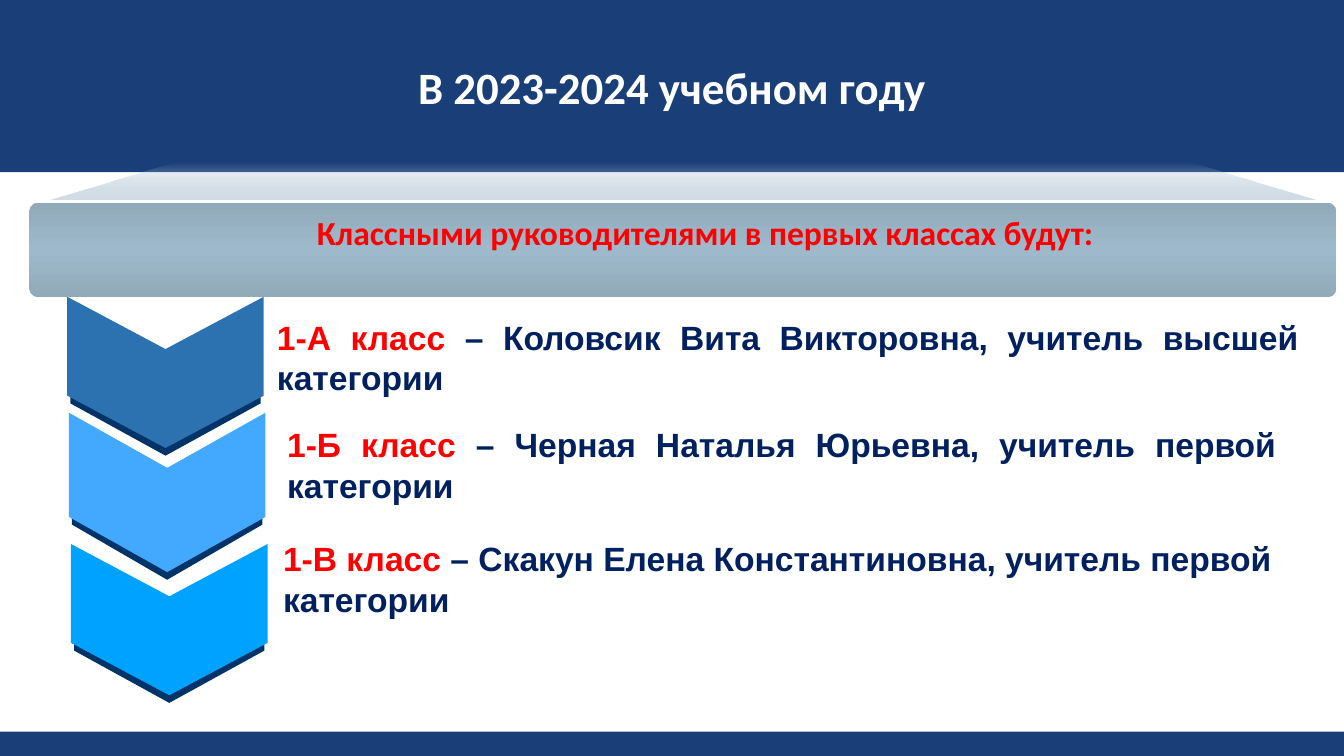
"""Build a slide that names the class teachers of the first forms."""
from dataclasses import dataclass

import lxml.etree
import pptx
import pptx.dml.color
import pptx.enum.shapes
import pptx.enum.text
import pptx.oxml.ns
import pptx.shapes.autoshape
import pptx.slide
import pptx.util

Pt = pptx.util.Pt
RGBColor = pptx.dml.color.RGBColor
Shapes = pptx.enum.shapes.MSO_SHAPE
Align = pptx.enum.text.PP_ALIGN
qn = pptx.oxml.ns.qn

NAVY = RGBColor(0x1A, 0x3E, 0x78)
WHITE = RGBColor(0xFF, 0xFF, 0xFF)
RED = RGBColor(0xFF, 0x00, 0x00)
INK = RGBColor(0x00, 0x20, 0x60)
EDGE = RGBColor(0x00, 0x34, 0x68)
STEEL = RGBColor(0x2C, 0x72, 0xB1)
SKY = RGBColor(0x43, 0xA9, 0xFF)
AZURE = RGBColor(0x00, 0xA2, 0xFF)
MIST = RGBColor(0xD1, 0xDC, 0xE5)
HAZE = RGBColor(0x9D, 0xB9, 0xCB)
SLATE = RGBColor(0x90, 0xAA, 0xBA)

CHEVRON_BREADTH = 140.4
EDGE_BREADTH = 136
EDGE_DROP = 5.5
TEXT_HEIGHT = 65.5


@dataclass
class Span:
    """A run of bold text."""
    text: str
    color: RGBColor
    size: float = 24
    font: str = "Arial"


@dataclass
class Stop:
    """A gradient stop, with position and opacity in percent."""
    position: int
    color: RGBColor
    opacity: int = 100


@dataclass
class FormRow:
    """A chevron and the text of one form beside it."""
    center: float
    top: float
    length: float
    color: RGBColor
    text_left: float
    text_top: float
    text_width: float
    align: Align
    space_after: float
    form: str
    teacher: str


ROWS = [
    FormRow(118.2, 212, 108, STEEL, 190.8, 222.5, 743.8, Align.JUSTIFY, 0,
            "1-А класс ", "– Коловсик Вита Викторовна, учитель высшей категории"),
    FormRow(119.4, 294.8, 113.8, SKY, 198, 299.5, 720.7, Align.JUSTIFY, 8,
            "1-Б класс ", "– Черная Наталья Юрьевна, учитель первой категории"),
    FormRow(120.9, 388.6, 108, AZURE, 195.1, 380.9, 743.8, Align.LEFT, 8,
            "1-В класс ", "– Скакун Елена Константиновна, учитель первой категории"),
]


def set_plain(shape: pptx.shapes.autoshape.Shape) -> None:
    """Remove the line and the shadow of a shape."""
    shape.shadow.inherit = False
    shape.line.fill.background()


def add_solid(page: pptx.slide.Slide, kind: Shapes, left: float, top: float,
              width: float, height: float, color: RGBColor) -> pptx.shapes.autoshape.Shape:
    """Add a preset shape in one colour."""
    shape = page.shapes.add_shape(kind, Pt(left), Pt(top), Pt(width), Pt(height))
    set_plain(shape)
    shape.fill.solid()
    shape.fill.fore_color.rgb = color
    return shape


def set_gradient(shape: pptx.shapes.autoshape.Shape, stops: list[Stop]) -> None:
    """Fill a shape with a gradient that runs from bottom to top."""
    shape.fill.gradient()
    shape.fill.gradient_angle = 90
    stop_list = next(shape.fill.gradient_stops._gsLst.iter(qn("a:gsLst")))
    for old in list(stop_list):
        stop_list.remove(old)
    for stop in stops:
        mark = lxml.etree.SubElement(stop_list, qn("a:gs"), pos=str(stop.position * 1000))
        color = lxml.etree.SubElement(mark, qn("a:srgbClr"), val=str(stop.color))
        lxml.etree.SubElement(color, qn("a:alpha"), val=str(stop.opacity * 1000))


def write(shape: pptx.shapes.autoshape.Shape, spans: list[Span], align: Align,
          space_after: float = 0) -> None:
    """Write one paragraph of bold spans into a shape."""
    shape.text_frame.word_wrap = True
    para = shape.text_frame.paragraphs[0]
    for name, value in {"alignment": align, "space_after": Pt(space_after)}.items():
        setattr(para, name, value)
    for span in spans:
        run = para.add_run()
        run.text = span.text
        run.font.color.rgb = span.color
        for name, value in {"name": span.font, "size": Pt(span.size), "bold": True}.items():
            setattr(run.font, name, value)


def add_text(page: pptx.slide.Slide, left: float, top: float, width: float, height: float,
             spans: list[Span], align: Align, space_after: float = 0) -> None:
    """Add a text box with one paragraph."""
    box = page.shapes.add_textbox(Pt(left), Pt(top), Pt(width), Pt(height))
    write(box, spans, align, space_after)


def add_chevron(page: pptx.slide.Slide, center: float, top: float, length: float,
                breadth: float, color: RGBColor) -> None:
    """Add a chevron that points down."""
    chevron = add_solid(page, Shapes.CHEVRON, center - length / 2,
                        top + (length - breadth) / 2, length, breadth, color)
    chevron.rotation = 90
    chevron.adjustments[0] = 0.346


def add_row(page: pptx.slide.Slide, row: FormRow) -> None:
    """Add the chevron with its dark edge, and the text of a form."""
    add_chevron(page, row.center, row.top + EDGE_DROP, row.length, EDGE_BREADTH, EDGE)
    add_chevron(page, row.center, row.top, row.length, CHEVRON_BREADTH, row.color)
    add_text(page, row.text_left, row.text_top, row.text_width, TEXT_HEIGHT,
             [Span(row.form, RED), Span(row.teacher, INK)], row.align, row.space_after)


def add_banner(page: pptx.slide.Slide) -> None:
    """Add the shelf, the bar and the heading on it."""
    builder = page.shapes.build_freeform(Pt(35.3), Pt(142.6))
    corners = [(125.3, 115.9), (850.3, 115.9), (941, 142.6)]
    builder.add_line_segments([(Pt(x), Pt(y)) for x, y in corners])
    shelf = builder.convert_to_shape()
    set_plain(shelf)
    set_gradient(shelf, [Stop(0, MIST), Stop(100, HAZE, 0)])
    bar = add_solid(page, Shapes.ROUNDED_RECTANGLE, 20.9, 144.7, 933.8, 67.7, HAZE)
    bar.adjustments[0] = 0.095
    set_gradient(bar, [Stop(0, SLATE), Stop(50, HAZE), Stop(100, SLATE)])
    heading = Span("Классными руководителями в первых классах будут:", RED, 24, "Calibri")
    add_text(page, 131.8, 147.6, 743.8, 36, [heading], Align.CENTER)


def main() -> None:
    """Build and save the deck."""
    deck = pptx.Presentation()
    for name, value in {"slide_width": Pt(960), "slide_height": Pt(540)}.items():
        setattr(deck, name, value)
    page = deck.slides.add_slide(deck.slide_layouts[6])
    add_solid(page, Shapes.RECTANGLE, 0, 522.5, 960, 17.5, NAVY)
    header = add_solid(page, Shapes.RECTANGLE, 0, 0, 960, 123, NAVY)
    header.text_frame.vertical_anchor = pptx.enum.text.MSO_ANCHOR.MIDDLE
    write(header, [Span("В 2023-2024 учебном году", WHITE, 32, "Calibri")], Align.CENTER)
    for row in ROWS:
        add_row(page, row)
    add_banner(page)
    deck.save("out.pptx")


if __name__ == "__main__":
    main()
